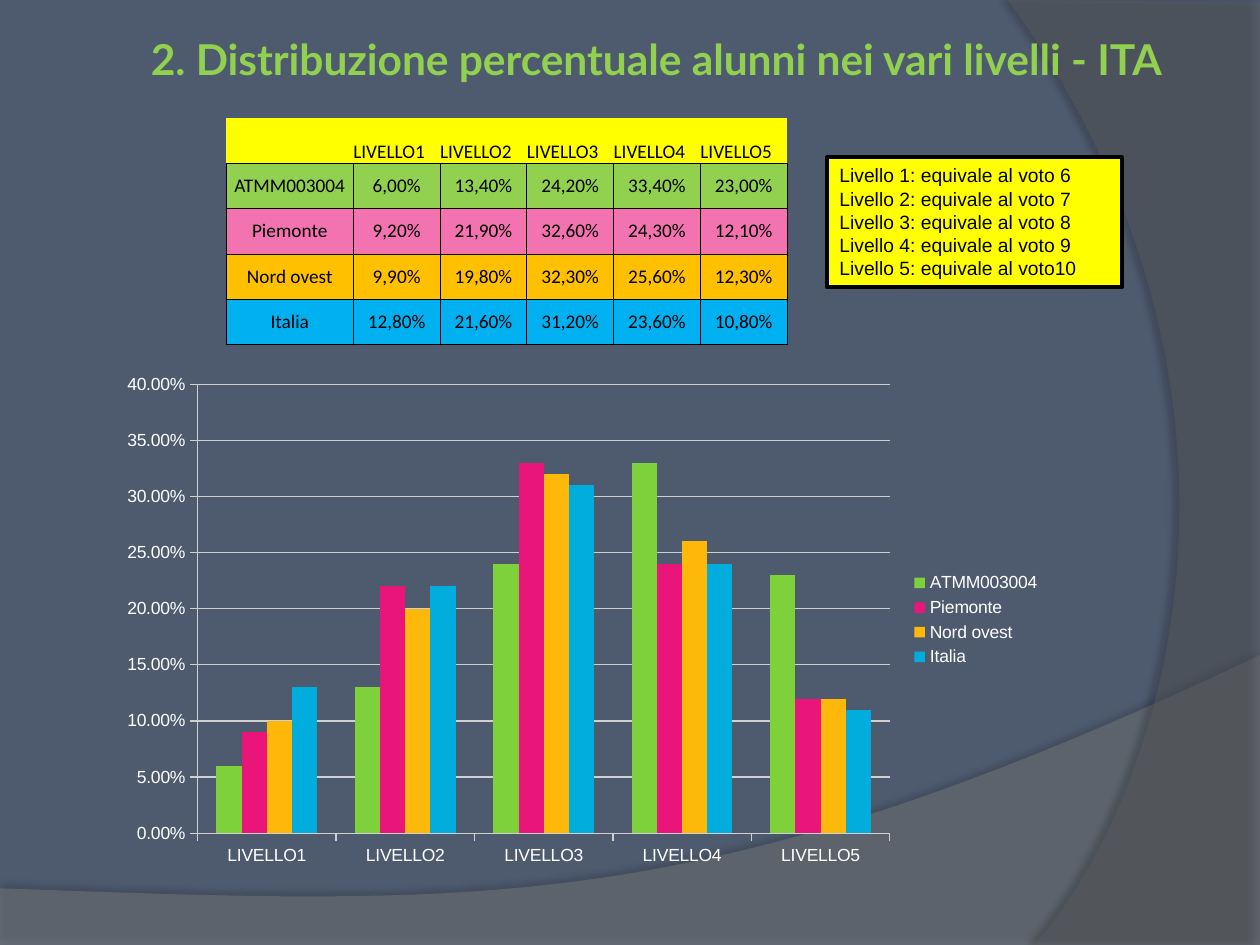
"""Build the slide on the share of pupils at each level in Italian."""
from dataclasses import dataclass, field
from typing import Any

from lxml.etree import SubElement
from pptx import Presentation
from pptx.chart.data import CategoryChartData
from pptx.dml.color import RGBColor
from pptx.enum.chart import XL_CHART_TYPE as ChartKind, XL_LEGEND_POSITION as LegendSpot
from pptx.enum.chart import XL_TICK_MARK as Tick
from pptx.enum.shapes import MSO_SHAPE as Preset
from pptx.enum.text import MSO_ANCHOR as Anchor, PP_ALIGN as Align
from pptx.oxml.ns import qn
from pptx.util import Pt

LEVELS = [f"LIVELLO{n}" for n in range(1, 6)]
SHARES = {
    "ATMM003004": ["6,00%", "13,40%", "24,20%", "33,40%", "23,00%"],
    "Piemonte": ["9,20%", "21,90%", "32,60%", "24,30%", "12,10%"],
    "Nord ovest": ["9,90%", "19,80%", "32,30%", "25,60%", "12,30%"],
    "Italia": ["12,80%", "21,60%", "31,20%", "23,60%", "10,80%"],
}
GRADES = [
    "Livello 1: equivale al voto 6",
    "Livello 2: equivale al voto 7",
    "Livello 3: equivale al voto 8\vLivello 4: equivale al voto 9\vLivello 5: equivale al voto10",
]


def rgb(code):
    return RGBColor.from_string(code)


def apply(target, values):
    for name, value in values.items():
        setattr(target, name, value)


def share(label):
    return round(float(label.rstrip("%").replace(",", ".")) / 100, 2)


def bezier(start, first, second, end, steps=40):
    for step in range(1, steps + 1):
        t = step / steps
        weights = ((1 - t) ** 3, 3 * t * (1 - t) ** 2, 3 * t * t * (1 - t), t ** 3)
        yield tuple(
            sum(w * c for w, c in zip(weights, axis))
            for axis in zip(start, first, second, end)
        )


def add_alpha(color_node, percent):
    SubElement(color_node, qn("a:alpha"), val=str(percent * 1000))


@dataclass
class Theme:
    ground: str = "4E5B6F"
    heading: str = "92D050"
    ink: str = "000000"
    light: str = "FFFFFF"
    grid: str = "D0D0D0"
    highlight: str = "FFFF00"
    rows: tuple = ("92D050", "F273AF", "FFC000", "00B0F0")
    bars: tuple = ("7FD13B", "EA157A", "FEB80A", "00ADDC")
    heading_size: float = 24.3
    body_size: int = 11
    chart_size: int = 10


@dataclass
class Deck:
    slide: Any
    theme: Theme = field(default_factory=Theme)

    def style(self, font, face, size, color, bold=False):
        apply(font, {"name": face, "size": Pt(size), "bold": bold})
        font.color.rgb = rgb(color)

    def background(self):
        fill = self.slide.background.fill
        fill.solid()
        fill.fore_color.rgb = rgb(self.theme.ground)

    def swoosh(self, outline, color, opacity, shadow_opacity, distance, degrees):
        start, *rest = [(Pt(x), Pt(y)) for x, y in outline]
        builder = self.slide.shapes.build_freeform(*start, scale=1.0)
        builder.add_line_segments(rest, close=True)
        swoosh = builder.convert_to_shape()
        swoosh.fill.solid()
        swoosh.fill.fore_color.rgb = rgb(color)
        swoosh.line.fill.background()
        swoosh.shadow.inherit = False
        properties = swoosh.element.spPr
        add_alpha(properties.find(qn("a:solidFill"))[0], opacity)
        shadow = SubElement(
            properties.find(qn("a:effectLst")), qn("a:outerShdw"),
            blurRad=str(Pt(4)), dist=str(Pt(distance)), dir=str(degrees * 60000),
            algn="ctr", rotWithShape="0",
        )
        add_alpha(SubElement(shadow, qn("a:srgbClr"), val=self.theme.ink), shadow_opacity)

    def title(self, text, *box):
        frame = self.slide.shapes.add_textbox(*map(Pt, box)).text_frame
        apply(frame, {
            "word_wrap": True, "vertical_anchor": Anchor.MIDDLE,
            "margin_left": Pt(3.6), "margin_right": Pt(9),
            "margin_top": Pt(13.6), "margin_bottom": Pt(3.6),
        })
        heading = frame.paragraphs[0]
        apply(heading, {"text": text, "alignment": Align.CENTER})
        self.style(heading.runs[0].font, "Lato", self.theme.heading_size,
                   self.theme.heading, True)

    def key(self, lines, *box):
        key = self.slide.shapes.add_shape(Preset.RECTANGLE, *map(Pt, box))
        key.shadow.inherit = False
        key.fill.solid()
        key.fill.fore_color.rgb = rgb(self.theme.highlight)
        key.line.color.rgb = rgb(self.theme.ink)
        key.line.width = Pt(2.25)
        frame = key.text_frame
        apply(frame, {"text": "\n".join(lines), "word_wrap": True,
                      "vertical_anchor": Anchor.TOP})
        for grade in frame.paragraphs:
            grade.alignment = Align.LEFT
            for run in grade.runs:
                self.style(run.font, "Arial", self.theme.body_size, self.theme.ink)

    def cell(self, cell, text, color, header):
        apply(cell, {
            "text": text, "margin_left": 0, "margin_right": 0,
            "margin_top": 0, "margin_bottom": 0,
            "vertical_anchor": Anchor.BOTTOM if header else Anchor.MIDDLE,
        })
        words = cell.text_frame.paragraphs[0]
        words.alignment = Align.LEFT if header else Align.CENTER
        for run in words.runs:
            self.style(run.font, "Calibri", self.theme.body_size, self.theme.ink)
        properties = cell._tc.get_or_add_tcPr()
        for side in "LRTB":
            edge = SubElement(properties, qn(f"a:ln{side}"), w=str(Pt(0.5)))
            if header and side != "B":
                SubElement(edge, qn("a:noFill"))
            else:
                paint = SubElement(edge, qn("a:solidFill"))
                SubElement(paint, qn("a:srgbClr"), val=self.theme.ink)
        cell.fill.solid()
        cell.fill.fore_color.rgb = rgb(color)

    def table(self, rows, widths, height, left, top):
        table = self.slide.shapes.add_table(
            len(rows), len(widths), Pt(left), Pt(top), Pt(sum(widths)), Pt(height * len(rows))
        ).table
        apply(table, {"first_row": False, "horz_banding": False})
        for column, width in zip(table.columns, widths):
            column.width = Pt(width)
        colors = (self.theme.highlight, *self.theme.rows)
        for r, (row, color) in enumerate(zip(rows, colors)):
            table.rows[r].height = Pt(height)
            for c, text in enumerate(row):
                self.cell(table.cell(r, c), text, color, r == 0)

    def chart(self, levels, shares, *box):
        data = CategoryChartData(number_format="0.00%")
        data.categories = levels
        for place, labels in shares.items():
            data.add_series(place, [share(label) for label in labels])
        chart = self.slide.shapes.add_chart(
            ChartKind.COLUMN_CLUSTERED, *map(Pt, box), data).chart
        self.style(chart.font, "Arial", self.theme.chart_size, self.theme.light)
        apply(chart, {"has_title": False, "has_legend": True})
        apply(chart.legend, {"position": LegendSpot.RIGHT, "include_in_layout": False})
        plot = chart.plots[0]
        apply(plot, {"gap_width": 150, "overlap": 0, "vary_by_categories": False})
        for series, color in zip(plot.series, self.theme.bars):
            series.format.fill.solid()
            series.format.fill.fore_color.rgb = rgb(color)
        values = chart.value_axis
        apply(values, {"minimum_scale": 0, "maximum_scale": 0.4, "major_unit": 0.05,
                       "has_major_gridlines": True})
        apply(values.tick_labels, {"number_format": "0.00%", "number_format_is_linked": False})
        for axis in (values, chart.category_axis):
            apply(axis, {"major_tick_mark": Tick.OUTSIDE, "minor_tick_mark": Tick.NONE})
        for part in (values, chart.category_axis, values.major_gridlines):
            part.format.line.color.rgb = rgb(self.theme.grid)
            part.format.line.width = Pt(0.75)


def main():
    show = Presentation()
    apply(show, {"slide_width": Pt(720), "slide_height": Pt(540)})
    deck = Deck(show.slides.add_slide(show.slide_layouts[6]))
    deck.background()
    wave = bezier((720, 374.4), (402.5, 524.9), (281.5, 517.7), (0, 507.6))
    deck.swoosh([(0, 507.6), (0, 540.7), (720, 540.7), (720, 374.4), *wave],
                "7F7F7F", 45, 35, 3.5, 270)
    arc = bezier((591.1, 540), (673.2, 445.7), (733, 216), (576, 0))
    deck.swoosh([(720, 1.4), (720, 540), (591.1, 540), *arc], "5E5E5E", 40, 45, 4, 180)
    deck.title("2. Distribuzione percentuale alunni nei vari livelli - ITA", 36, 0, 684, 56.9)
    deck.key(GRADES, 472.6, 90, 168.5, 74.2)
    rows = [["", *LEVELS], *([place, *labels] for place, labels in SHARES.items())]
    deck.table(rows, [72.6] + [49.6] * 5, 25.9, 129.3, 67.5)
    deck.chart(LEVELS, SHARES, 61.9, 208.1, 540, 292.3)
    show.save("out.pptx")


if __name__ == "__main__":
    main()
